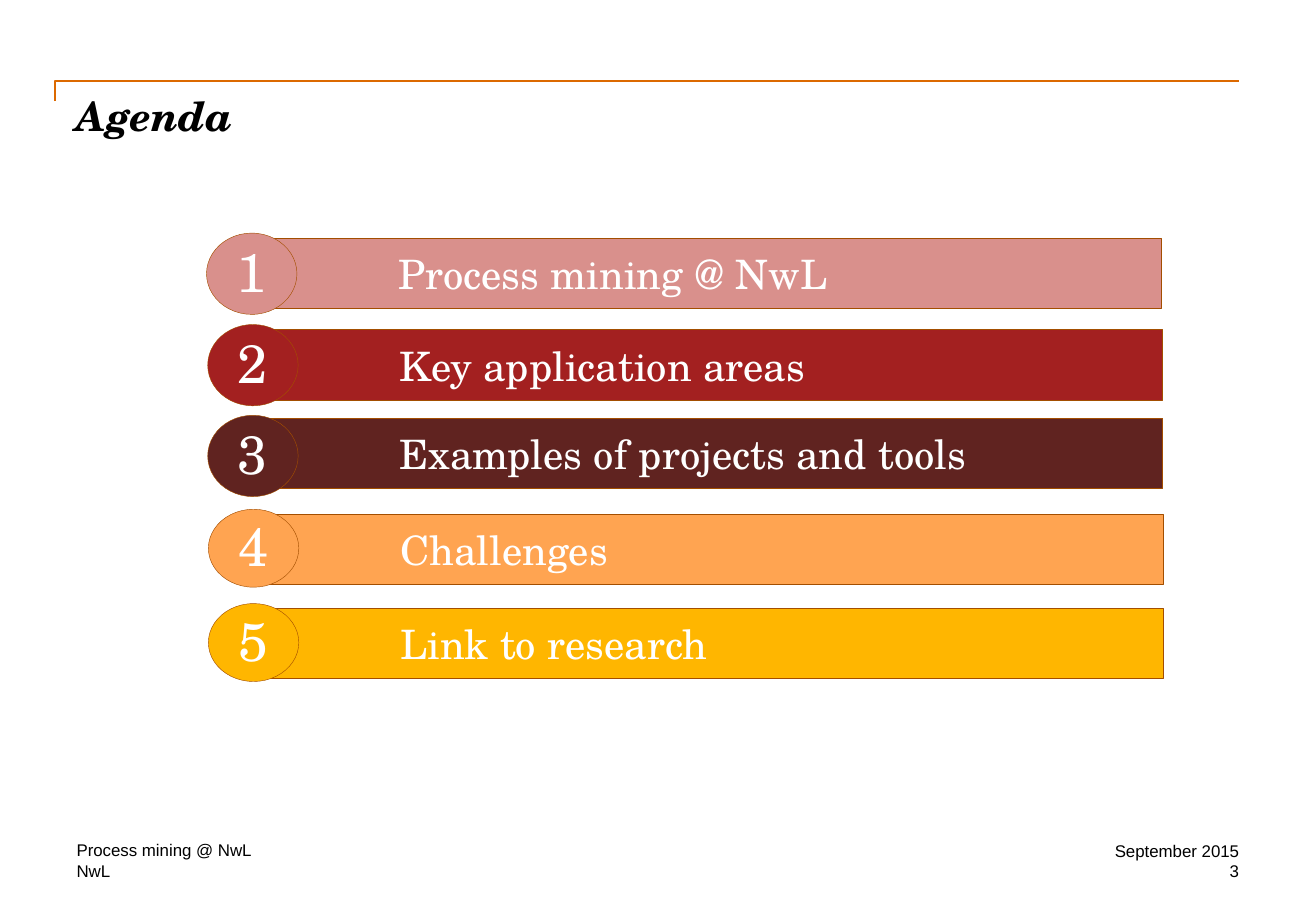
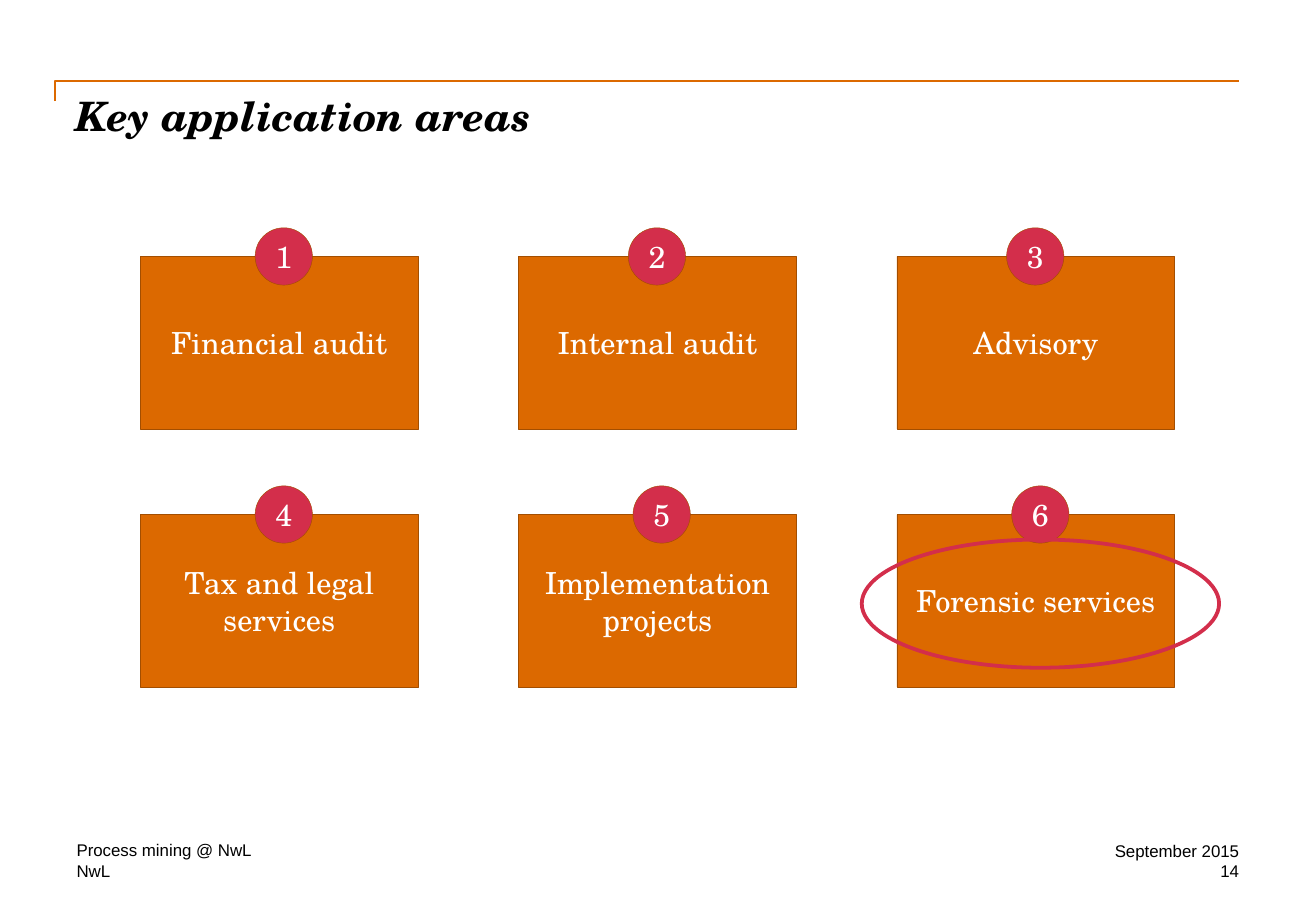
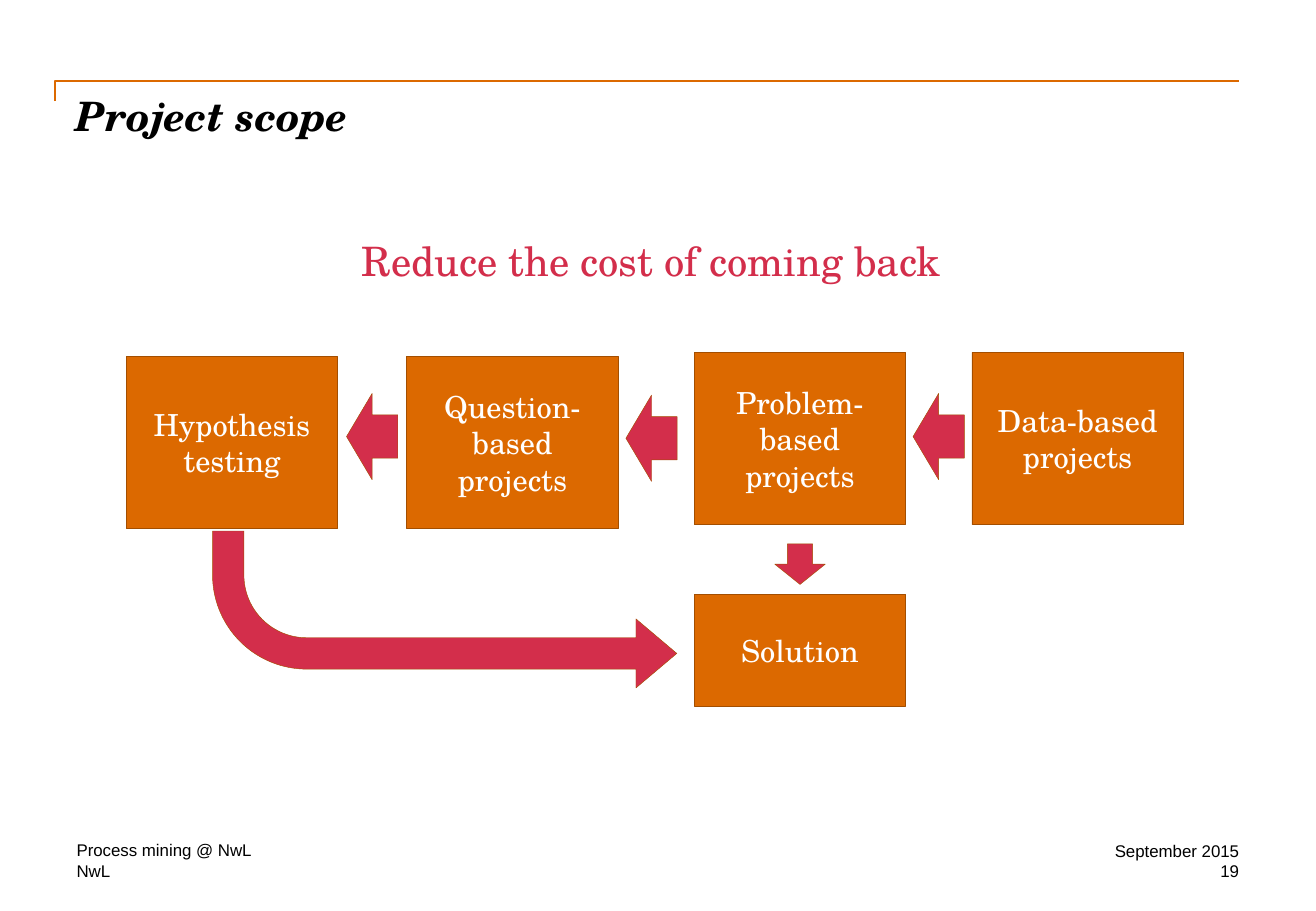
from pptx import Presentation
from pptx.dml.color import RGBColor
from pptx.enum import shapes, text
from pptx.util import Pt

COLOURS = {
    "black": "000000", "white": "FFFFFF", "orange": "DC6900", "outline": "A34E00",
    "red": "D32E4B", "rose": "D9908C", "crimson": "A32020", "maroon": "602320",
    "peach": "FFA451", "yellow": "FFB600",
}
SERIF, SANS = "TeX Gyre Schola", "Arial"
KIND, ALIGN, ANCHOR = shapes.MSO_SHAPE, text.PP_ALIGN, text.MSO_ANCHOR
NO_MARGINS = (0, 0, 0, 0)
BLOCK_MARGINS = (7.2, 3.6, 7.2, 3.6)


def write(frame, words, size, colour="black", font=SERIF, align=ALIGN.LEFT,
          anchor=ANCHOR.TOP, margins=NO_MARGINS):
    """Fill a text frame with one run; margins are left, top, right, bottom."""
    frame.word_wrap = True
    frame.auto_size = text.MSO_AUTO_SIZE.NONE
    frame.vertical_anchor = anchor
    (frame.margin_left, frame.margin_top,
     frame.margin_right, frame.margin_bottom) = map(Pt, margins)
    paragraph = frame.paragraphs[0]
    paragraph.alignment = align
    run = paragraph.add_run()
    run.text = words
    run.font.name, run.font.size = font, Pt(size)
    run.font.color.rgb = RGBColor.from_string(COLOURS[colour])
    return run


def add_block(slide, kind, box, fill, words="", size=18, align=ALIGN.CENTER,
              margins=BLOCK_MARGINS):
    """Add a filled, thinly outlined shape; box is left, top, width, height."""
    block = slide.shapes.add_shape(kind, *map(Pt, box))
    block.shadow.inherit = False
    block.fill.solid()
    block.fill.fore_color.rgb = RGBColor.from_string(COLOURS[fill])
    block.line.color.rgb = RGBColor.from_string(COLOURS["outline"])
    block.line.width = Pt(0.25)
    if words:
        write(block.text_frame, words, size, "white", align=align,
              anchor=ANCHOR.MIDDLE, margins=margins)
    return block


deck = Presentation()
deck.slide_width, deck.slide_height = Pt(780), Pt(540)
title_only = deck.slide_layouts[5]

# Title, corner rule and footers of every slide
pages = []
for heading, number in (("Agenda", "3"), ("Key application areas", "14"),
                        ("Project scope", "19")):
    page = deck.slides.add_slide(title_only)
    pages.append(page)

    title = page.shapes.title
    title.left, title.top, title.width, title.height = map(Pt, (45, 54, 689, 72))
    title_run = write(title.text_frame, heading, 24)
    title_run.font.bold = title_run.font.italic = True

    outline = page.shapes.build_freeform(Pt(32.6), Pt(60))
    outline.add_line_segments([(Pt(32.6), Pt(48)), (Pt(734.4), Pt(48))], close=False)
    corner_rule = outline.convert_to_shape()
    corner_rule.shadow.inherit = False
    corner_rule.fill.background()
    corner_rule.line.color.rgb = RGBColor.from_string(COLOURS["orange"])
    corner_rule.line.width = Pt(1)

    for words, left, top, width, align, anchor in (
            ("Process mining @ NwL", 45.4, 498, 448, ALIGN.LEFT, ANCHOR.BOTTOM),
            ("NwL", 45.4, 510, 221, ALIGN.LEFT, ANCHOR.TOP),
            ("September 2015", 604.4, 498, 130, ALIGN.RIGHT, ANCHOR.TOP),
            (number, 604.4, 510, 130, ALIGN.RIGHT, ANCHOR.TOP)):
        footer = page.shapes.add_textbox(Pt(left), Pt(top), Pt(width), Pt(12))
        write(footer.text_frame, words, 10, font=SANS, align=align, anchor=anchor)

agenda, areas, scope = pages

# Agenda: a bar and a numbered disc for each topic
topics = (  # words, colour, left and top of the disc, disc height, top of the bar
    ("Process mining @ NwL", "rose", 122.4, 138.2, 48.2, 141.2),
    ("Key application areas", "crimson", 123.1, 192.4, 48.2, 195.4),
    ("Examples of projects and tools", "maroon", 123.1, 246.2, 48.2, 247.9),
    ("Challenges", "peach", 123.5, 301.9, 46.2, 304.8),
    ("Link to research", "yellow", 123.5, 357.8, 46.2, 360.4),
)
for number, (topic, colour, left, disc_top, disc_height, bar_top) in enumerate(topics, 1):
    add_block(agenda, KIND.RECTANGLE, (left + 26, bar_top, 540, 41.8), colour, topic, 24,
              ALIGN.LEFT, (87.8, 3.6, 7.2, 3.6))
    add_block(agenda, KIND.OVAL, (left, disc_top, 53.6, disc_height), colour, str(number), 32,
              margins=(7.2, 0, 7.2, 3.6))

# Key application areas: three columns, two rows
services = (  # words, left of the badge
    ("Financial audit", 151.2), ("Internal audit", 372.4), ("Advisory", 596.6),
    ("Tax and legal services", 151.2), ("Implementation projects", 375.2),
    ("Forensic services", 599.6),
)
for index, (service, badge_left) in enumerate(services):
    row, column = divmod(index, 3)
    top = 152 + row * 153
    add_block(areas, KIND.RECTANGLE, (83.2 + column * 224.2, top, 164.6, 102.2), "orange", service)
    add_block(areas, KIND.OVAL, (badge_left, top - 17, 34, 34), "red", str(index + 1))

highlight = areas.shapes.add_shape(KIND.OVAL, Pt(510.8), Pt(319.8), Pt(211.8), Pt(76))
highlight.shadow.inherit = False
highlight.fill.background()
highlight.line.color.rgb = RGBColor.from_string(COLOURS["red"])
highlight.line.width = Pt(2.25)

# Project scope: project types leading back to the solution
message = scope.shapes.add_textbox(Pt(214.2), Pt(139.7), Pt(352), Pt(28))
write(message.text_frame, "Reduce the cost of coming back", 24, "red")

for words, left, top, height in (
        ("Hypothesis testing", 74.8, 211.2, 102.2),
        ("Question-based projects", 241, 211.2, 102.2),
        ("Problem-based projects", 411.4, 208.8, 102.2),
        ("Data-based projects", 576, 208.8, 102.2),
        ("Solution", 411.4, 352.2, 66.2)):
    add_block(scope, KIND.RECTANGLE, (left, top, 125.4, height), "orange", words)

for left, top in ((205.4, 233.2), (371, 234.2), (541.2, 233.2)):
    add_block(scope, KIND.LEFT_ARROW, (left, top, 30.4, 51.2), "red")
add_block(scope, KIND.DOWN_ARROW, (459.2, 322.4, 30, 24), "red")

shortcut = add_block(scope, KIND.BENT_ARROW, (126, 314.8, 275.2, 93), "red")
for position, value in enumerate((0.2, 0.22, 0.26, 0.6)):
    shortcut.adjustments[position] = value
shortcut._element.spPr.xfrm.set("flipV", "1")

deck.save("out.pptx")
